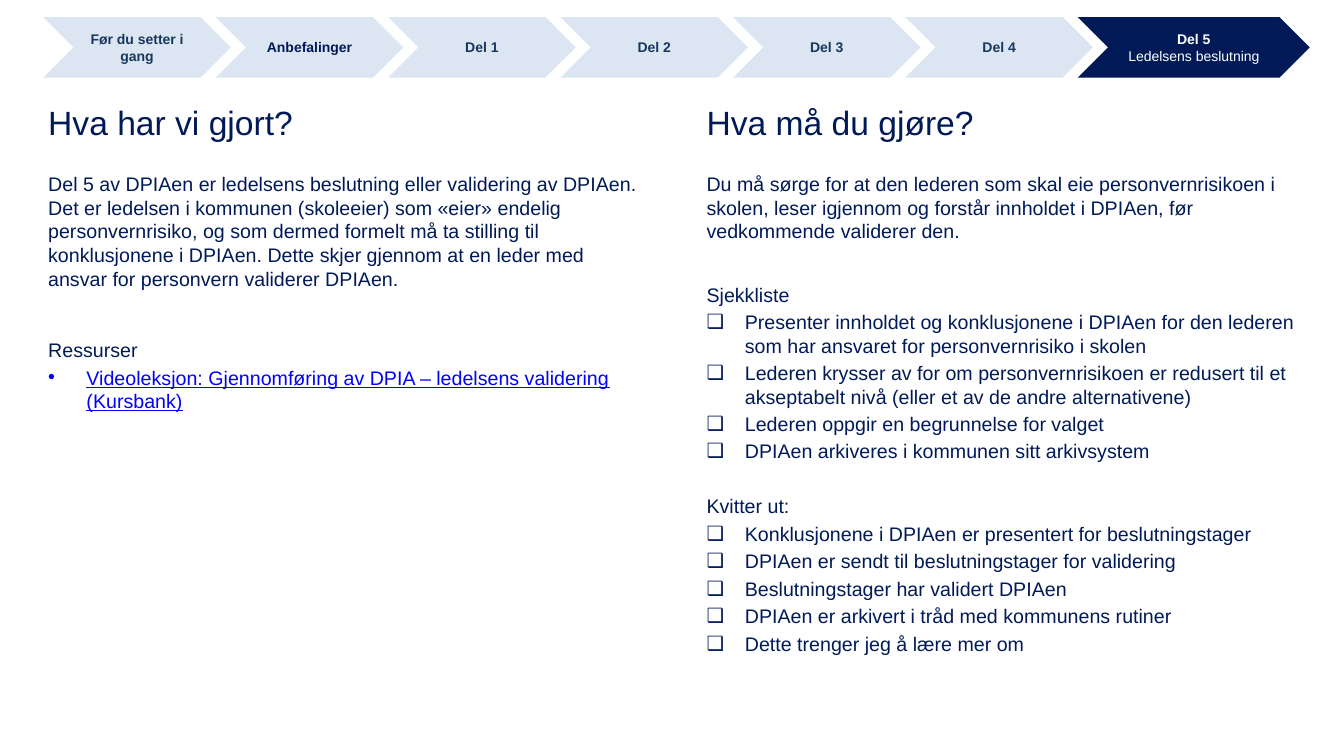
from lxml import etree
from pptx import Presentation
from pptx.dml.color import RGBColor
from pptx.enum.shapes import MSO_SHAPE
from pptx.enum.text import MSO_ANCHOR, PP_ALIGN
from pptx.oxml.ns import qn
from pptx.util import Inches, Pt

CHEVRON = MSO_SHAPE.CHEVRON
MIDDLE = MSO_ANCHOR.MIDDLE
TOP = MSO_ANCHOR.TOP
CENTER = PP_ALIGN.CENTER

NAVY = RGBColor(0x00, 0x1A, 0x58)
STEEL = RGBColor(0x17, 0x37, 0x5E)
PALE_BLUE = RGBColor(0xDC, 0xE6, 0xF2)
LINK_BLUE = RGBColor(0x00, 0x00, 0xFF)
WHITE = RGBColor(0xFF, 0xFF, 0xFF)

FONT = "Arial"
BODY_SIZE = 14
LINE_GAP = 2.8
LEFT_COLUMN = 0.38
RIGHT_COLUMN = 6.91
COLUMN_WIDTH = 6.04
STEP_PITCH = 1.71
STEP_WIDTH = 1.86
LAST_STEP_WIDTH = 2.3

STEPS = [
    ("Før du setter i gang", STEEL),
    ("Anbefalinger", NAVY),
    ("Del 1", STEEL),
    ("Del 2", STEEL),
    ("Del 3", STEEL),
    ("Del 4", STEEL),
]
DONE_TEXT = (
    "Del 5 av DPIAen er ledelsens beslutning eller validering av DPIAen. "
    "Det er ledelsen i kommunen (skoleeier) som «eier» endelig personvernrisiko, "
    "og som dermed formelt må ta stilling til konklusjonene i DPIAen. "
    "Dette skjer gjennom at en leder med ansvar for personvern validerer DPIAen."
)
RESOURCES = ["Videoleksjon: Gjennomføring av DPIA – ledelsens validering (Kursbank)"]
TODO_TEXT = (
    "Du må sørge for at den lederen som skal eie personvernrisikoen i skolen, "
    "leser igjennom og forstår innholdet i DPIAen, før vedkommende validerer den."
)
CHECKLIST = [
    "Presenter innholdet og konklusjonene i DPIAen for den lederen "
    "som har ansvaret for personvernrisiko i skolen",
    "Lederen krysser av for om personvernrisikoen er redusert til et "
    "akseptabelt nivå (eller et av de andre alternativene)",
    "Lederen oppgir en begrunnelse for valget",
    "DPIAen arkiveres i kommunen sitt arkivsystem",
]
SIGN_OFF = [
    "Konklusjonene i DPIAen er presentert for beslutningstager",
    "DPIAen er sendt til beslutningstager for validering",
    "Beslutningstager har validert DPIAen",
    "DPIAen er arkivert i tråd med kommunens rutiner",
    "Dette trenger jeg å lære mer om",
]


def next_paragraph(frame):
    if frame.paragraphs[0].runs:
        return frame.add_paragraph()
    return frame.paragraphs[0]


def add_run(paragraph, text, size, color, bold=False, underline=False):
    run = paragraph.add_run()
    run.text = text
    run.font.name = FONT
    run.font.size = Pt(size)
    run.font.bold = bold
    run.font.underline = underline
    run.font.color.rgb = color


def add_text_box(slide, left, top, height, anchor):
    shape = slide.shapes.add_textbox(
        Inches(left), Inches(top), Inches(COLUMN_WIDTH), Inches(height)
    )
    frame = shape.text_frame
    frame.word_wrap = True
    frame.vertical_anchor = anchor
    return frame


def add_heading(slide, left, text):
    frame = add_text_box(slide, left, 0.91, 0.6, MIDDLE)
    add_run(next_paragraph(frame), text, 24, NAVY)


def add_body_paragraph(frame, text, gap=0):
    paragraph = next_paragraph(frame)
    paragraph.space_before = Pt(gap)
    add_run(paragraph, text, BODY_SIZE, NAVY)


def add_bullets(frame, items, symbol, color=NAVY, underline=False):
    for item in items:
        paragraph = next_paragraph(frame)
        properties = paragraph._p.get_or_add_pPr()
        properties.set("marL", str(Inches(0.38)))
        properties.set("indent", str(-Inches(0.38)))
        etree.SubElement(properties, qn("a:buFont"), typeface=FONT)
        etree.SubElement(properties, qn("a:buChar"), char=symbol)
        paragraph.space_before = Pt(LINE_GAP)
        add_run(paragraph, item, BODY_SIZE, color, underline=underline)


def add_step(slide, index, width, fill, color, title, subtitle=None):
    shape = slide.shapes.add_shape(
        CHEVRON,
        Inches(0.43 + index * STEP_PITCH),
        Inches(0.17),
        Inches(width),
        Inches(0.6),
    )
    shape.shadow.inherit = False
    shape.fill.solid()
    shape.fill.fore_color.rgb = fill
    shape.line.fill.background()
    frame = shape.text_frame
    frame.word_wrap = True
    frame.vertical_anchor = MIDDLE
    for text, bold in ((title, True), (subtitle, False)):
        if text:
            paragraph = next_paragraph(frame)
            paragraph.alignment = CENTER
            add_run(paragraph, text, 10, color, bold=bold)


def main():
    presentation = Presentation()
    presentation.slide_width = Inches(13.33)
    presentation.slide_height = Inches(7.5)
    slide = presentation.slides.add_slide(presentation.slide_layouts[6])

    for index, (title, color) in enumerate(STEPS):
        add_step(slide, index, STEP_WIDTH, PALE_BLUE, color, title)
    add_step(
        slide, len(STEPS), LAST_STEP_WIDTH, NAVY, WHITE, "Del 5", "Ledelsens beslutning"
    )

    add_heading(slide, LEFT_COLUMN, "Hva har vi gjort?")
    done = add_text_box(slide, LEFT_COLUMN, 1.66, 5.41, TOP)
    add_body_paragraph(done, DONE_TEXT)
    add_body_paragraph(done, "Ressurser", gap=34.3)
    add_bullets(done, RESOURCES, "•", LINK_BLUE, underline=True)

    add_heading(slide, RIGHT_COLUMN, "Hva må du gjøre?")
    todo = add_text_box(slide, RIGHT_COLUMN, 1.66, 5.84, TOP)
    add_body_paragraph(todo, TODO_TEXT)
    add_body_paragraph(todo, "Sjekkliste", gap=28.3)
    add_bullets(todo, CHECKLIST, "❑")
    add_body_paragraph(todo, "Kvitter ut:", gap=22.3)
    add_bullets(todo, SIGN_OFF, "❑")

    presentation.save("out.pptx")


if __name__ == "__main__":
    main()
